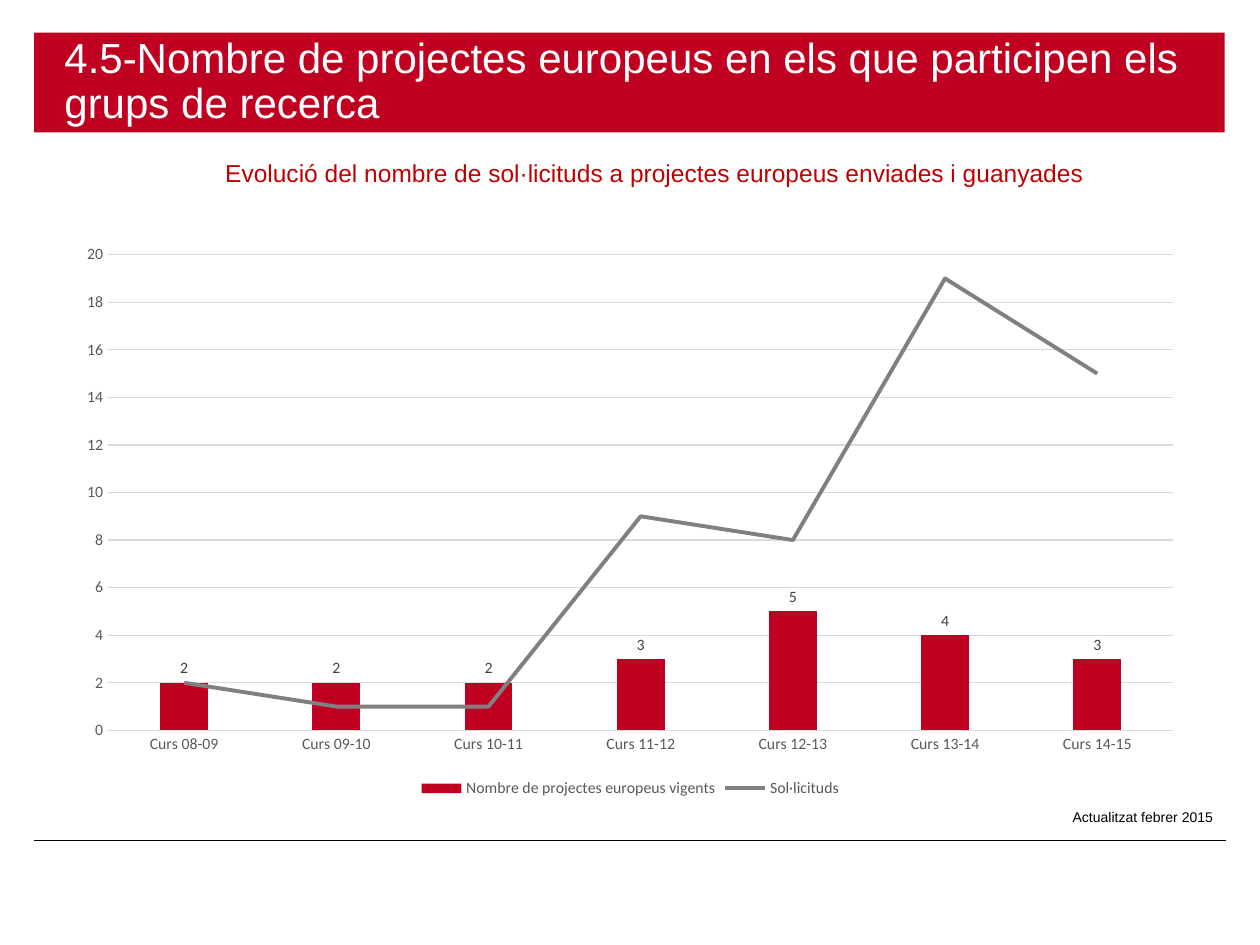
from copy import deepcopy
from dataclasses import dataclass

from lxml.etree import SubElement
from pptx import Presentation
from pptx.chart.chart import Chart
from pptx.chart.data import CategoryChartData
from pptx.dml.color import RGBColor
from pptx.enum.chart import (XL_CHART_TYPE, XL_LABEL_POSITION, XL_LEGEND_POSITION,
                             XL_MARKER_STYLE, XL_TICK_MARK)
from pptx.enum.shapes import MSO_CONNECTOR, MSO_SHAPE
from pptx.enum.text import MSO_ANCHOR, PP_ALIGN
from pptx.oxml import parse_xml
from pptx.oxml.ns import nsdecls, qn
from pptx.slide import Slide
from pptx.text.text import Font
from pptx.util import Cm, Pt

RED, GRAY, GRID, AXIS_TEXT = "C00021", "808080", "D9D9D9", "595959"


@dataclass
class TextBlock:
    text: str
    left: float
    top: float
    width: float
    height: float
    size: float
    color: str
    align: PP_ALIGN = PP_ALIGN.LEFT
    anchor: MSO_ANCHOR = MSO_ANCHOR.TOP
    fill: str = ""
    left_inset: float = 0.25
    line_spacing: float = 1.0


TEXT_BLOCKS = [
    TextBlock("4.5-Nombre de projectes europeus en els que participen els grups de recerca",
              0.69, 0.66, 24, 2.01, 24, "FFFFFF", anchor=MSO_ANCHOR.MIDDLE,
              fill=RED, left_inset=0.61, line_spacing=0.9),
    TextBlock("Actualitzat febrer 2015", 21.11, 16.18, 3.6, 0.61, 8, "000000", PP_ALIGN.RIGHT),
    TextBlock("Evolució del nombre de sol·licituds a projectes europeus enviades i guanyades",
              4.29, 3.07, 18.57, 0.86, 14, "C00000"),
]

COURSES = [f"Curs {year:02}-{year + 1:02}" for year in range(8, 15)]
PROJECTS = ("Nombre de projectes europeus vigents", [2, 2, 2, 3, 5, 4, 3])
APPLICATIONS = ("Sol·licituds", [2, 1, 1, 9, 8, 19, 15])


def rgb(value: str) -> RGBColor:
    return RGBColor.from_string(value)


def set_font(font: Font, name: str, size: float, color: str) -> None:
    font.name, font.size = name, Pt(size)
    font.color.rgb = rgb(color)


def add_text(page: Slide, block: TextBlock) -> None:
    place = Cm(block.left), Cm(block.top), Cm(block.width), Cm(block.height)
    if block.fill:
        box = page.shapes.add_shape(MSO_SHAPE.RECTANGLE, *place)
        box.shadow.inherit = False
        box.fill.solid()
        box.fill.fore_color.rgb = rgb(block.fill)
        box.line.fill.background()
    else:
        box = page.shapes.add_textbox(*place)
    frame = box.text_frame
    frame.word_wrap = True
    frame.vertical_anchor = block.anchor
    frame.margin_left = Cm(block.left_inset)
    para = frame.paragraphs[0]
    para.text = block.text
    para.alignment = block.align
    para.line_spacing = block.line_spacing
    set_font(para.font, "Arial", block.size, block.color)


def add_footer_rule(page: Slide) -> None:
    rule = page.shapes.add_connector(MSO_CONNECTOR.STRAIGHT,
                                     Cm(0.69), Cm(16.94), Cm(24.71), Cm(16.94))
    rule.line.color.rgb = rgb("000000")
    rule.line.width = Pt(0.5)
    SubElement(rule.element.spPr, qn("a:effectLst"))


def move_last_series_to_line(chart: Chart) -> None:
    """Put the last column series on a line plot sharing the same axes."""
    columns = chart.plots[0]
    bar_chart = columns.series[0]._element.getparent()
    series = columns.series[-1]._element
    for flag in series.findall(qn("c:invertIfNegative")):
        series.remove(flag)
    line_chart = parse_xml(f'<c:lineChart {nsdecls("c")}><c:grouping val="standard"/>'
                           '<c:varyColors val="0"/></c:lineChart>')
    line_chart.append(series)
    SubElement(line_chart, qn("c:marker")).set("val", "1")
    for axis_id in bar_chart.findall(qn("c:axId")):
        line_chart.append(deepcopy(axis_id))
    bar_chart.addnext(line_chart)


def style_axes(chart: Chart) -> None:
    for axis in (chart.category_axis, chart.value_axis):
        axis.major_tick_mark = axis.minor_tick_mark = XL_TICK_MARK.NONE
        set_font(axis.tick_labels.font, "Calibri", 9, AXIS_TEXT)
    values = chart.value_axis
    values.minimum_scale, values.maximum_scale, values.major_unit = 0, 20, 2
    values.format.line.fill.background()
    for line in (chart.category_axis.format.line, values.major_gridlines.format.line):
        line.color.rgb = rgb(GRID)
        line.width = Pt(0.75)


def add_projects_chart(page: Slide) -> None:
    data = CategoryChartData()
    data.categories = COURSES
    for name, values in (PROJECTS, APPLICATIONS):
        data.add_series(name, values)
    chart = page.shapes.add_chart(XL_CHART_TYPE.COLUMN_CLUSTERED, Cm(1.3), Cm(4.72),
                                  Cm(22.81), Cm(11.46), data).chart
    set_font(chart.font, "Calibri", 10, "000000")
    chart.has_title = False
    move_last_series_to_line(chart)
    style_axes(chart)

    # Columns with value labels
    columns, lines = chart.plots
    columns.gap_width, columns.overlap = 219, -27
    columns.vary_by_categories = False
    projects = columns.series[0]
    projects.format.fill.solid()
    projects.format.fill.fore_color.rgb = rgb(RED)
    labels = projects.data_labels
    labels.show_value = True
    labels.position = XL_LABEL_POSITION.OUTSIDE_END
    set_font(labels.font, "Calibri", 9, "404040")

    # Line without markers
    applications = lines.series[0]
    applications.smooth = False
    applications.marker.style = XL_MARKER_STYLE.NONE
    applications.format.line.color.rgb = rgb(GRAY)
    applications.format.line.width = Pt(2.25)

    # Legend
    chart.has_legend = True
    chart.legend.position = XL_LEGEND_POSITION.BOTTOM
    chart.legend.include_in_layout = False
    set_font(chart.legend.font, "Calibri", 9, AXIS_TEXT)


def main() -> None:
    deck = Presentation()
    deck.slide_width, deck.slide_height = Cm(25.4), Cm(19.05)
    page = deck.slides.add_slide(deck.slide_layouts[6])
    add_footer_rule(page)
    for block in TEXT_BLOCKS:
        add_text(page, block)
    add_projects_chart(page)
    deck.save("out.pptx")


if __name__ == "__main__":
    main()
